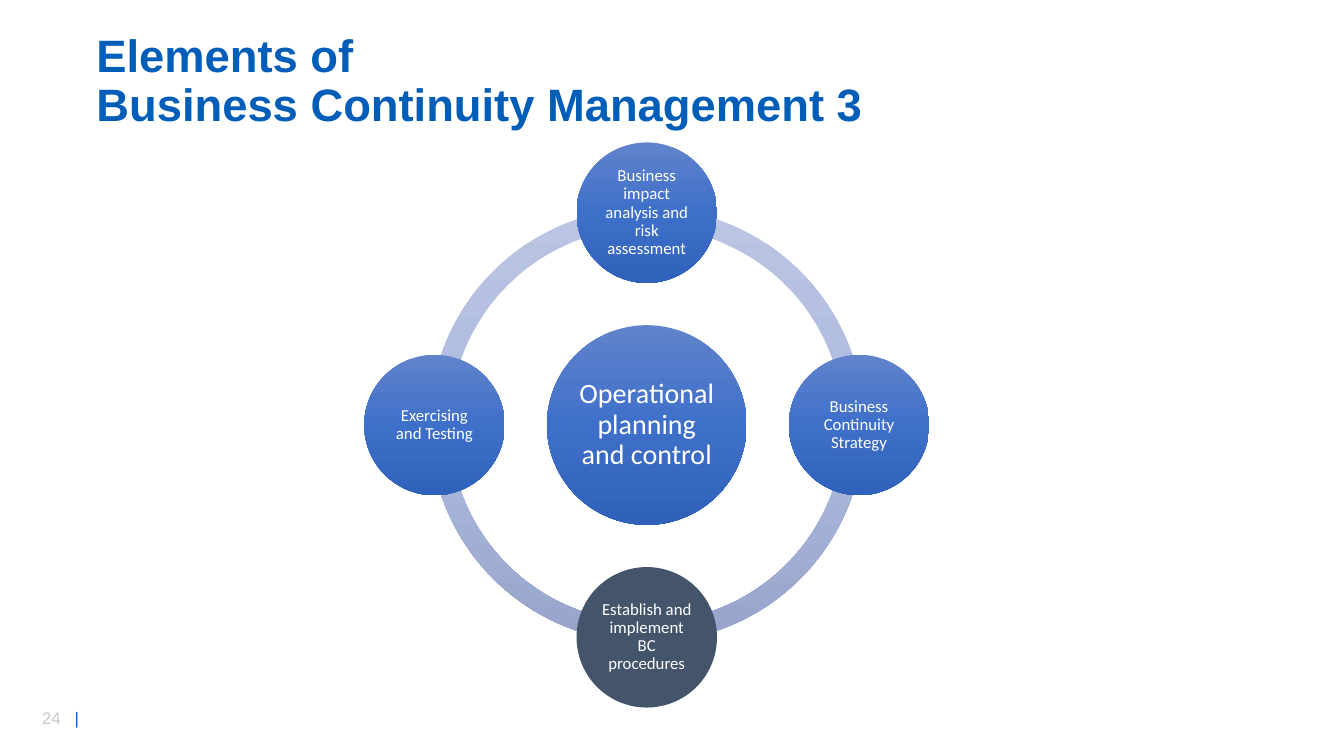
from copy import deepcopy
from math import cos, radians, sin

from lxml import etree
from pptx import Presentation
from pptx.dml.color import RGBColor
from pptx.enum.shapes import MSO_SHAPE
from pptx.enum.text import MSO_ANCHOR, PP_ALIGN
from pptx.oxml.ns import qn
from pptx.util import Cm, Pt

BLOCK_ARC = MSO_SHAPE.BLOCK_ARC
OVAL = MSO_SHAPE.OVAL
MIDDLE = MSO_ANCHOR.MIDDLE
CENTER = PP_ALIGN.CENTER

BLUE = "005EB8"
RING_COLORS = ["BBC5E3", "AEBBE0", "98A4CB"]
NODE_COLORS = ["6183CB", "3E70CA", "3062BB"]
SLATE = ["44546A"]

CENTER_X, CENTER_Y = 16.3, 10.71
ORBIT = 5.35
RING_SIZE, HUB_SIZE, NODE_SIZE = 10.95, 5.03, 3.54


def color(value):
    return RGBColor.from_string(value)


def add_round(kind, x, y, size, colors):
    shape = page.shapes.add_shape(
        kind, Cm(x - size / 2), Cm(y - size / 2), Cm(size), Cm(size))
    shape.shadow.inherit = False
    shape.line.fill.background()
    if len(colors) == 1:
        shape.fill.solid()
        shape.fill.fore_color.rgb = color(colors[0])
        return shape
    shape.fill.gradient()
    shape.fill.gradient_angle = 270
    stop_list = shape._element.spPr.find(".//" + qn("a:gsLst"))
    stop_list.append(deepcopy(stop_list[-1]))
    for stop, position, value in zip(shape.fill.gradient_stops, [0, 0.5, 1], colors):
        stop.position = position
        stop.color.rgb = color(value)
    return shape


deck = Presentation()
deck.slide_width, deck.slide_height = Cm(33.87), Cm(19.05)
page = deck.slides.add_slide(deck.slide_layouts[6])

number_box = page.shapes.add_textbox(Cm(0.81), Cm(17.7), Cm(1.8), Cm(0.76))
para = number_box.text_frame.paragraphs[0]
tabs = etree.SubElement(para._p.get_or_add_pPr(), qn("a:tabLst"))
etree.SubElement(tabs, qn("a:tab"), pos=str(Cm(0.82)), algn="l")
para.font.name = "Arial"
para.font.size = Pt(12)
for text, value in [("24\t", "C9C9C9"), ("|", BLUE)]:
    span = para.add_run()
    span.text = text
    span.font.color.rgb = color(value)

title_box = page.shapes.add_textbox(Cm(2.18), Cm(1.22), Cm(29.57), Cm(1.7))
title_box.text_frame.word_wrap = True
title_box.text_frame.vertical_anchor = MIDDLE
para = title_box.text_frame.paragraphs[0]
para.text = "Elements of\vBusiness Continuity Management 3"
para.line_spacing = 0.9
para.font.name = "Arial"
para.font.size = Pt(32.4)
para.font.bold = True
para.font.color.rgb = color(BLUE)

for start, end in [(108, 162), (54, 108), (0, 54), (162, 0)]:
    arc = add_round(BLOCK_ARC, CENTER_X, CENTER_Y, RING_SIZE, RING_COLORS)
    arc.adjustments[0] = start
    arc.adjustments[1] = end
    arc.adjustments[2] = 0.046

circles = [("Operational planning and control", 0, 0, HUB_SIZE, 20, 0.08, NODE_COLORS)]
steps = [
    ("Business impact analysis and risk assessment", NODE_COLORS),
    ("Business Continuity Strategy", NODE_COLORS),
    ("Establish and implement BC procedures", SLATE),
    ("Exercising and Testing", NODE_COLORS),
]
for index, (text, colors) in enumerate(steps):
    angle = radians(index * 360 / len(steps) - 90)
    circles.append((text, ORBIT * cos(angle), ORBIT * sin(angle),
                    NODE_SIZE, 12, 0.05, colors))

for text, dx, dy, size, points, inset, colors in circles:
    circle = add_round(OVAL, CENTER_X + dx, CENTER_Y + dy, size, colors)
    frame = circle.text_frame
    frame.word_wrap = True
    frame.vertical_anchor = MIDDLE
    frame.margin_left = frame.margin_right = Cm(inset)
    frame.margin_top = frame.margin_bottom = Cm(inset)
    para = frame.paragraphs[0]
    para.text = text
    para.alignment = CENTER
    para.line_spacing = 0.9
    para.font.name = "Calibri"
    para.font.size = Pt(points)
    para.font.color.rgb = color("FFFFFF")

deck.save("out.pptx")
